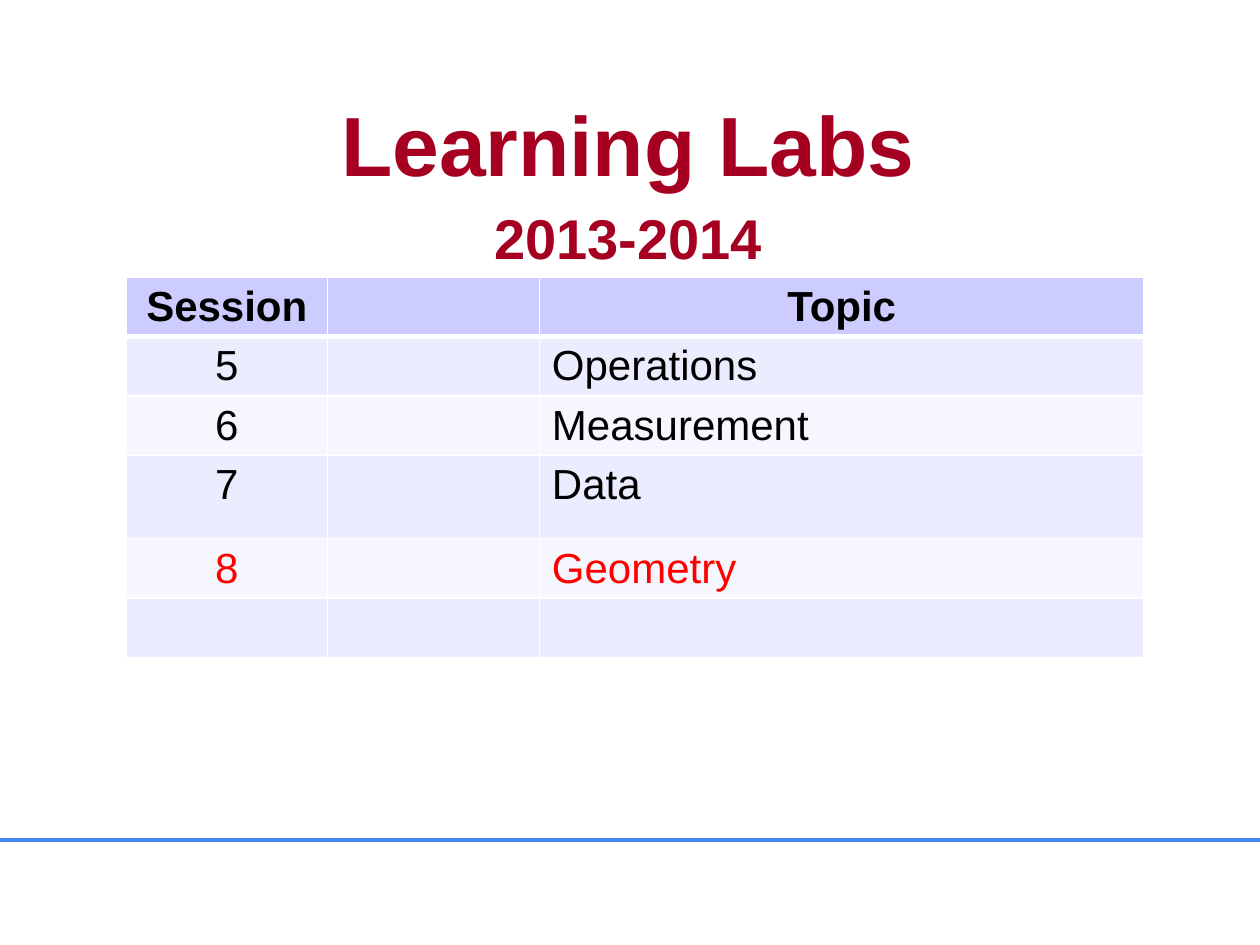
from lxml.etree import SubElement
from pptx import Presentation
from pptx.dml.color import RGBColor
from pptx.enum.text import MSO_ANCHOR, MSO_AUTO_SIZE, PP_ALIGN
from pptx.enum.shapes import MSO_CONNECTOR
from pptx.oxml.ns import qn
from pptx.util import Pt

COLORS = {
    "title": "A50021",
    "text": "000000",
    "current": "FF0000",
    "header": "CCCCFF",
    "odd": "ECECFF",
    "even": "F6F6FF",
    "border": "FFFFFF",
    "rule": "4288F0",
}
SESSIONS = [("5", "Operations"), ("6", "Measurement"), ("7", "Data"), ("8", "Geometry"), ("", "")]
CURRENT_SESSION = "8"
COLUMN_WIDTHS = [115.2, 121, 345.6]
ROW_HEIGHTS = [34, 34, 34, 47.5, 34, 34]


def rgb(name):
    return RGBColor.from_string(COLORS[name])


class SlideBuilder:
    font_name = "Arial"

    def __init__(self, slide):
        self.slide = slide

    def add_run(self, paragraph, text, size, color, bold=False):
        run = paragraph.add_run()
        run.text = text
        run.font.name = self.font_name
        run.font.size = Pt(size)
        run.font.bold = bold
        run.font.color.rgb = rgb(color)

    def title(self, left, top, width, height, lines):
        heading = self.slide.shapes.title
        heading.left, heading.top = Pt(left), Pt(top)
        heading.width, heading.height = Pt(width), Pt(height)
        frame = heading.text_frame
        frame.auto_size = MSO_AUTO_SIZE.NONE
        frame.word_wrap = False
        frame.vertical_anchor = MSO_ANCHOR.BOTTOM
        for index, (text, size) in enumerate(lines):
            paragraph = frame.add_paragraph() if index else frame.paragraphs[0]
            paragraph.alignment = PP_ALIGN.CENTER
            paragraph.space_before = Pt(6 if index else 0)
            self.add_run(paragraph, text, size, "title", bold=True)

    def rule(self, y, width):
        rule = self.slide.shapes.add_connector(MSO_CONNECTOR.STRAIGHT, 0, Pt(y), Pt(width), Pt(y))
        rule.line.color.rgb = rgb("rule")
        rule.line.width = Pt(2)
        SubElement(rule._element.spPr, qn("a:effectLst"))

    def cell_borders(self, cell, top, bottom):
        """Draw the four sides; call before the fill, which must follow them in the XML."""
        properties = cell._tc.get_or_add_tcPr()
        for side, weight in (("L", 1), ("R", 1), ("T", top), ("B", bottom)):
            line = SubElement(properties, qn(f"a:ln{side}"), w=str(Pt(weight)))
            fill = SubElement(line, qn("a:solidFill"))
            SubElement(fill, qn("a:srgbClr"), val=COLORS["border"])

    def schedule(self, left, top, rows):
        table = self.slide.shapes.add_table(
            len(rows), len(COLUMN_WIDTHS), Pt(left), Pt(top),
            Pt(sum(COLUMN_WIDTHS)), Pt(sum(ROW_HEIGHTS))).table
        for column, width in zip(table.columns, COLUMN_WIDTHS):
            column.width = Pt(width)
        for row, height in zip(table.rows, ROW_HEIGHTS):
            row.height = Pt(height)
        for r, (session, topic) in enumerate(rows):
            is_header = r == 0
            band = "header" if is_header else "odd" if r % 2 else "even"
            color = "current" if session == CURRENT_SESSION else "text"
            for c, text in enumerate((session, "", topic)):
                cell = table.cell(r, c)
                self.cell_borders(cell, top=3 if r == 1 else 1, bottom=3 if is_header else 1)
                cell.fill.solid()
                cell.fill.fore_color.rgb = rgb(band)
                if text:
                    paragraph = cell.text_frame.paragraphs[0]
                    centered = is_header or c == 0
                    paragraph.alignment = PP_ALIGN.CENTER if centered else PP_ALIGN.LEFT
                    self.add_run(paragraph, text, 24, color, bold=is_header)


def main():
    deck = Presentation()
    deck.slide_width, deck.slide_height = Pt(720), Pt(540)
    title_only = deck.slide_layouts[5]
    builder = SlideBuilder(deck.slides.add_slide(title_only))
    builder.rule(480, 720)
    builder.schedule(72, 158.4, [("Session", "Topic"), *SESSIONS])
    builder.title(186, 48.5, 346, 110, [("Learning Labs", 48), ("2013-2014", 32)])
    deck.save("out.pptx")


if __name__ == "__main__":
    main()
